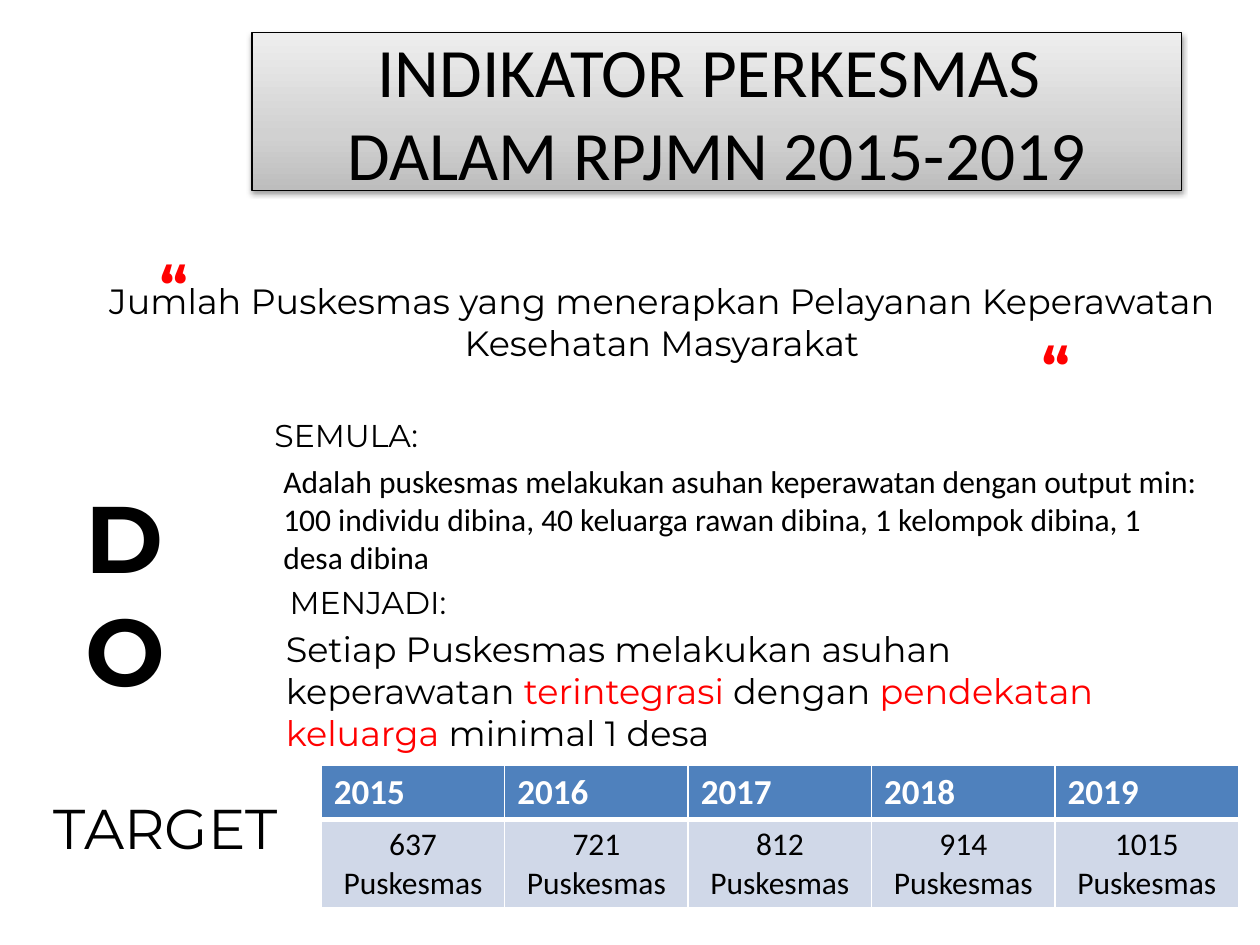
from copy import deepcopy

from lxml import etree
from pptx import Presentation
from pptx.dml.color import RGBColor
from pptx.enum.text import MSO_ANCHOR, MSO_AUTO_SIZE, PP_ALIGN
from pptx.oxml.ns import qn
from pptx.util import Inches, Pt

BLACK = RGBColor(0x00, 0x00, 0x00)
WHITE = RGBColor(0xFF, 0xFF, 0xFF)
RED = RGBColor(0xFF, 0x00, 0x00)
HEADER_BLUE = RGBColor(0x4F, 0x81, 0xBD)
BODY_BLUE = RGBColor(0xD0, 0xD8, 0xE8)
TITLE_STOPS = [
    (0, RGBColor(0xBD, 0xBD, 0xBD)),
    (0.35, RGBColor(0xD1, 0xD1, 0xD1)),
    (1, RGBColor(0xEE, 0xEE, 0xEE)),
]
LEFT, CENTER = PP_ALIGN.LEFT, PP_ALIGN.CENTER
TOP, MIDDLE = MSO_ANCHOR.TOP, MSO_ANCHOR.MIDDLE
NO_AUTOFIT = MSO_AUTO_SIZE.NONE
BODY_FONT = "Calibri"
ACCENT_FONT = "Montserrat"

TARGETS = {"2015": "637", "2016": "721", "2017": "812", "2018": "914", "2019": "1015"}


def write_text(frame, text, size=18, font=ACCENT_FONT, color=BLACK, bold=False, align=LEFT):
    spans = [(text, color)] if isinstance(text, str) else text
    para = frame.paragraphs[0]
    para.alignment = align
    for words, span_color in spans:
        for index, line in enumerate(words.split("\n")):
            if index:
                para.add_line_break()
            span = para.add_run()
            span.text = line
            span.font.size = Pt(size)
            span.font.name = font
            span.font.bold = bold
            span.font.color.rgb = span_color


def add_text(page, text, left, top, width, height, wrap=True, margin_right=0.1, **text_format):
    box = page.shapes.add_textbox(Inches(left), Inches(top), Inches(width), Inches(height))
    frame = box.text_frame
    frame.word_wrap = wrap
    frame.margin_right = Inches(margin_right)
    write_text(frame, text, **text_format)


def add_shadow(shape, blur, distance):
    shape.shadow.inherit = False
    effects = shape._element.spPr.find(qn("a:effectLst"))
    shadow = etree.SubElement(
        effects, qn("a:outerShdw"), blurRad=str(Pt(blur)), dist=str(Pt(distance)),
        dir="5400000", rotWithShape="0")
    color = etree.SubElement(shadow, qn("a:srgbClr"), val=str(BLACK))
    etree.SubElement(color, qn("a:alpha"), val="38000")


def fill_title_gradient(title):
    title.fill.gradient()
    title.fill.gradient_angle = 90
    stop_list = title._element.spPr.find(qn("a:gradFill")).find(qn("a:gsLst"))
    stop_list.insert(1, deepcopy(stop_list[0]))
    for stop, (position, color) in zip(title.fill.gradient_stops, TITLE_STOPS):
        stop.position = position
        stop.color.rgb = color


def format_title(page, text):
    title = page.shapes.title
    title.left, title.top = Inches(2), Inches(0.26)
    title.width, title.height = Inches(7.38), Inches(1.25)
    fill_title_gradient(title)
    title.line.color.rgb = BLACK
    title.line.width = Pt(0.75)
    add_shadow(title, 3.1, 1.6)
    frame = title.text_frame
    frame.auto_size = NO_AUTOFIT
    frame.vertical_anchor = MIDDLE
    write_text(frame, text, size=39.6, font=BODY_FONT, align=CENTER)


def set_borders(cell, **widths):
    properties = cell._tc.get_or_add_tcPr()
    for index, side in enumerate("LRTB"):
        border = etree.Element(qn(f"a:ln{side}"), w=str(Pt(widths.get(side, 1))))
        fill = etree.SubElement(border, qn("a:solidFill"))
        etree.SubElement(fill, qn("a:srgbClr"), val=str(WHITE))
        properties.insert(index, border)


def format_cell(cell, text, fill, anchor, borders, **text_format):
    cell.fill.solid()
    cell.fill.fore_color.rgb = fill
    cell.vertical_anchor = anchor
    set_borders(cell, **borders)
    write_text(cell.text_frame, text, font=BODY_FONT, **text_format)


def add_target_table(page):
    table = page.shapes.add_table(
        2, len(TARGETS), Inches(2.55), Inches(6.07), Inches(7.28), Inches(1.13)).table
    table.rows[0].height = Inches(0.43)
    table.rows[1].height = Inches(0.7)
    for column, (year, count) in enumerate(TARGETS.items()):
        format_cell(table.cell(0, column), year, HEADER_BLUE, TOP, {"B": 3},
                    size=20, color=WHITE, bold=True)
        format_cell(table.cell(1, column), f"{count} Puskesmas", BODY_BLUE, MIDDLE, {"T": 3},
                    align=CENTER)


def main():
    deck = Presentation()
    deck.slide_width, deck.slide_height = Inches(10), Inches(7.5)
    page = deck.slides.add_slide(deck.slide_layouts[5])

    format_title(page, "INDIKATOR PERKESMAS \nDALAM RPJMN 2015-2019")
    add_text(page, "Jumlah Puskesmas yang menerapkan Pelayanan Keperawatan Kesehatan Masyarakat",
             0.67, 2.17, 9.17, 0.77, size=20, align=CENTER)
    add_text(page, "DO", 0.58, 3.75, 1.42, 1.01, margin_right=0.55, size=54, bold=True)
    add_text(page, "SEMULA:", 2.08, 3.25, 1.83, 0.4)
    add_text(page, "Adalah puskesmas melakukan asuhan keperawatan dengan output min:\n"
                   "100 individu dibina, 40 keluarga rawan dibina, 1 kelompok dibina, 1 desa dibina",
             2.15, 3.62, 7.52, 1.01, font=BODY_FONT)
    add_text(page, "MENJADI:", 2.2, 4.58, 1.57, 0.4, wrap=False)
    add_text(page, [("Setiap Puskesmas melakukan asuhan keperawatan ", BLACK),
                    ("terintegrasi ", RED), ("dengan ", BLACK),
                    ("pendekatan keluarga ", RED), ("minimal 1 desa", BLACK)],
             2.17, 4.93, 7.06, 1.11, size=20)
    for left, top in ((1.17, 1.94), (8.17, 2.58)):
        add_text(page, "“", left, top, 0.43, 0.64, wrap=False, size=32, color=RED, bold=True)
    add_target_table(page)
    add_text(page, "TARGET", 0.33, 6.25, 2.21, 0.64, wrap=False, size=32)

    deck.save("out.pptx")


if __name__ == "__main__":
    main()
